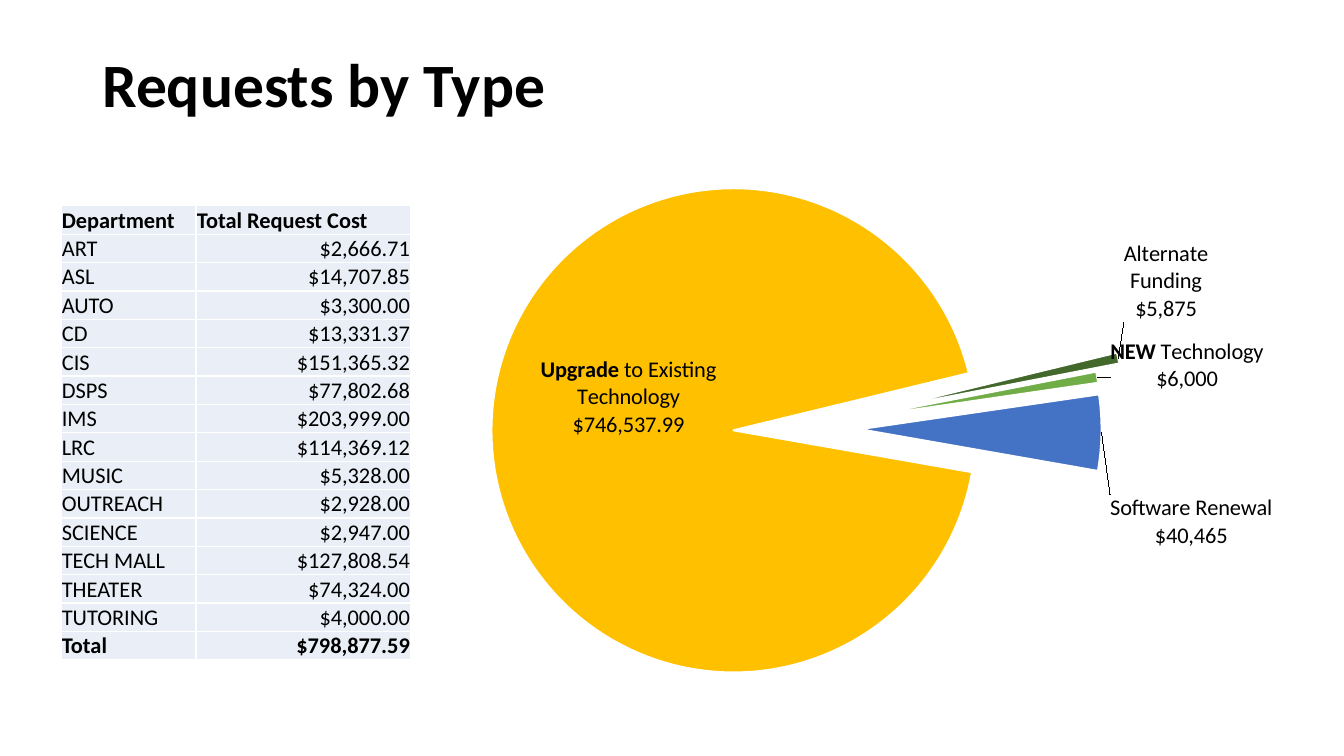
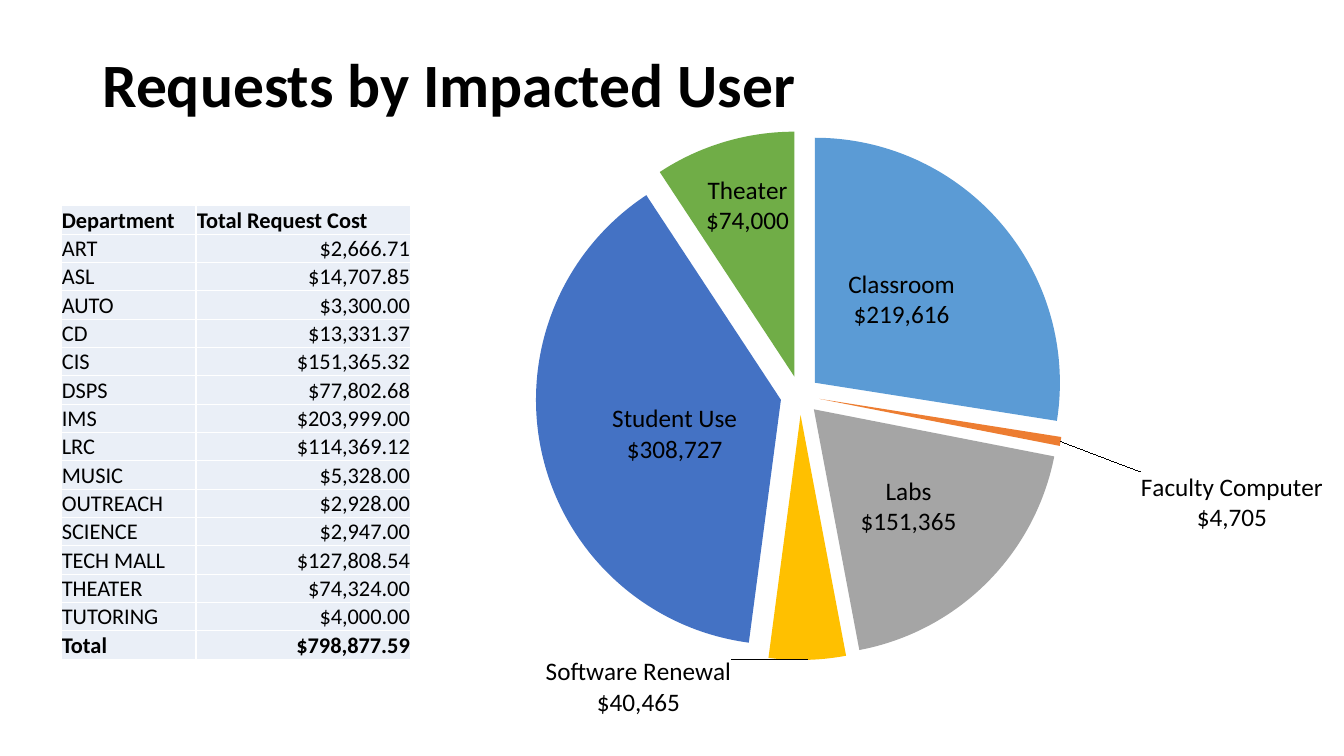
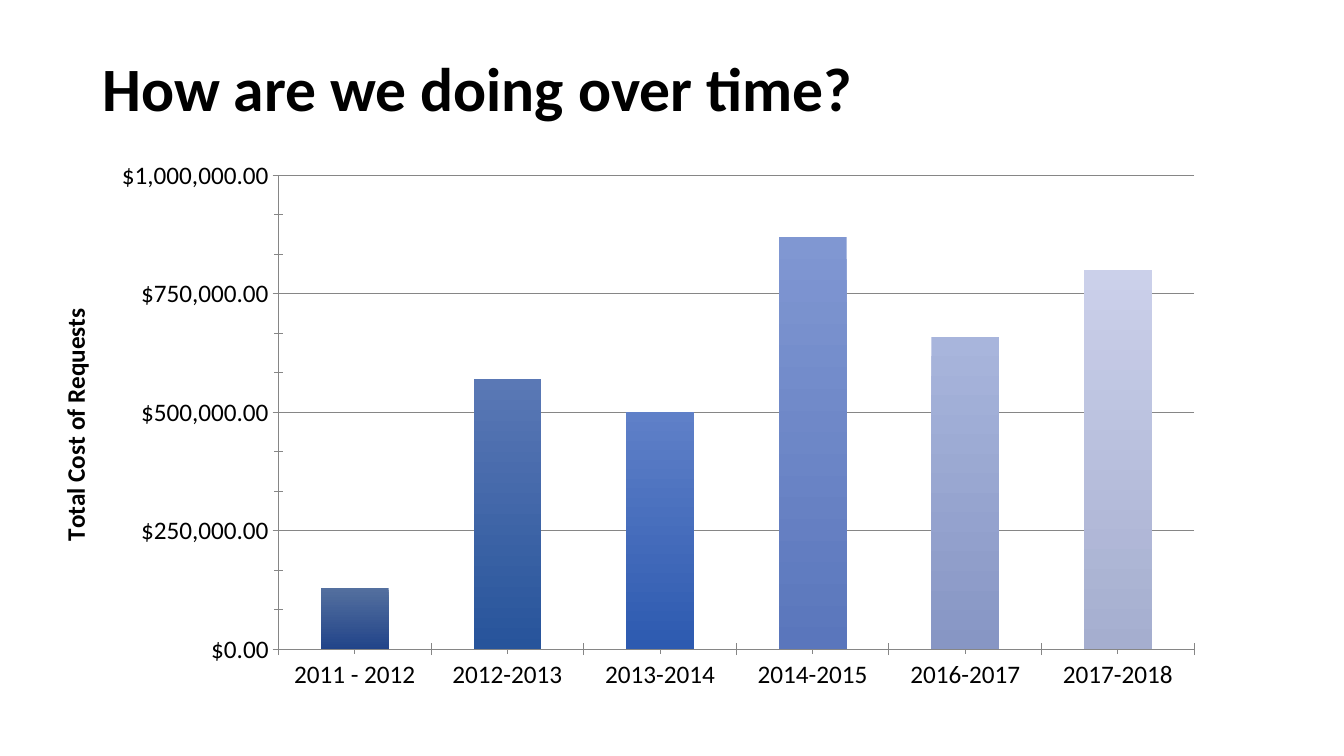
import math

from pptx import Presentation
from pptx.chart.data import CategoryChartData
from pptx.dml.color import RGBColor
from pptx.enum import chart as kinds, text
from pptx.oxml import parse_xml
from pptx.oxml.ns import nsdecls, qn
from pptx.util import Pt

FONT, BLACK, WHITE, TABLE_FILL, AXIS_GRAY = "Calibri", "000000", "FFFFFF", "EAEFF7", "868686"
DOLLARS = '"$"#,##0'

REQUESTS = [
    ("Department", "Total Request Cost"),
    ("ART", "$2,666.71"), ("ASL", "$14,707.85"), ("AUTO", "$3,300.00"),
    ("CD", "$13,331.37"), ("CIS", "$151,365.32"), ("DSPS", "$77,802.68"),
    ("IMS", "$203,999.00"), ("LRC", "$114,369.12"), ("MUSIC", "$5,328.00"),
    ("OUTREACH", "$2,928.00"), ("SCIENCE", "$2,947.00"), ("TECH MALL", "$127,808.54"),
    ("THEATER", "$74,324.00"), ("TUTORING", "$4,000.00"), ("Total", "$798,877.59"),
]

# Slices: name, value, colour, explosion %, label centre on the slide, label runs (text, bold)
BY_TYPE = dict(
    frame=(204.5, 24.5, 722, 562), center=(569, 306), radius=173, start=79, size=16, border=1.5,
    slices=[
        ("NEW Technology", 6000, "70AD47", 26, (848, 261),
         [("NEW", 1), (" Technology\n$6,000", 0)]),
        ("Software Renewal", 40465, "4472C4", 26, (851, 373), None),
        ("Upgrade to Existing Technology", 746538, "FFC000", 26, (449, 284),
         [("Upgrade", 1), (" to Existing\nTechnology\n$746,537.99", 0)]),
        ("Alternate Funding", 5875, "43682B", 36, (833, 201),
         [("Alternate\nFunding\n$5,875", 0)]),
    ])
BY_USER = dict(
    frame=(0, 56, 950, 462), center=(571.5, 282.5), radius=175, start=0, size=18, border=0,
    slices=[
        ("Classroom", 219616, "5B9BD5", 8, (644, 214), None),
        ("Faculty Computer", 4705, "ED7D31", 8, (880, 359), None),
        ("Labs", 151365, "A5A5A5", 8, (649, 362), None),
        ("Software Renewal", 40465, "FFC000", 8, (456, 491), None),
        ("Student Use", 308727, "4472C4", 8, (482, 310), None),
        ("Theater", 74000, "70AD47", 8, (534, 147), None),
    ])

# Year, total cost, top and bottom colour of the bar
YEARS = [
    ("2011 - 2012", 130000, "54709F", "224489"),
    ("2012-2013", 570000, "5A78B5", "27549B"),
    ("2013-2014", 500000, "5F80C8", "2D5AB0"),
    ("2014-2015", 870000, "8097D2", "5A76BC"),
    ("2016-2017", 660000, "A8B5DC", "8796C4"),
    ("2017-2018", 800000, "CBD0EA", "A5AECF"),
]


def rgb(color):
    return RGBColor.from_string(color)


def style(font, size, bold=False):
    font.name, font.size, font.bold = FONT, Pt(size), bold
    font.color.rgb = rgb(BLACK)


def add_title(page, title, top=10):
    box = page.shapes.add_textbox(Pt(66), Pt(top), Pt(828), Pt(104.4))
    frame = box.text_frame
    frame.word_wrap = True
    frame.vertical_anchor = text.MSO_ANCHOR.MIDDLE
    frame.text = title
    frame.paragraphs[0].line_spacing = 0.9
    style(frame.paragraphs[0].runs[0].font, 44, True)


def add_cell_borders(cell):
    props = cell._tc.get_or_add_tcPr()
    for position, side in enumerate(("lnL", "lnR", "lnT", "lnB")):
        props.insert(position, parse_xml(
            f'<a:{side} {nsdecls("a")} w="12700"><a:solidFill>'
            f'<a:srgbClr val="{WHITE}"/></a:solidFill></a:{side}>'))


def add_request_table(page):
    row_height, widths = 20.25, (96.5, 153.5)
    table = page.shapes.add_table(len(REQUESTS), 2, Pt(43.5), Pt(147), Pt(sum(widths)),
                                  Pt(row_height * len(REQUESTS))).table
    for column, width in zip(table.columns, widths):
        column.width = Pt(width)
    last = len(REQUESTS) - 1
    for r, values in enumerate(REQUESTS):
        table.rows[r].height = Pt(row_height)
        for c, value in enumerate(values):
            cell = table.cell(r, c)
            cell.text = value
            cell.fill.solid()
            cell.fill.fore_color.rgb = rgb(TABLE_FILL)
            cell.vertical_anchor = text.MSO_ANCHOR.BOTTOM
            cell.margin_left = cell.margin_right = cell.margin_top = Pt(0.7)
            cell.margin_bottom = 0
            para = cell.text_frame.paragraphs[0]
            if r and c:
                para.alignment = text.PP_ALIGN.RIGHT
            style(para.runs[0].font, 16, r in (0, last))
            add_cell_borders(cell)


def add_chart(page, kind, frame, rows, size):
    data = CategoryChartData()
    data.categories = [row[0] for row in rows]
    data.add_series("Series 1", [row[1] for row in rows])
    chart = page.shapes.add_chart(kind, *map(Pt, frame), data).chart
    chart.has_legend = chart.has_title = False
    chart.plots[0].vary_by_categories = False
    style(chart.font, size)
    return chart


def layout_xml(inner=False, **values):
    """Manual chart layout; values are fractions of the chart's size."""
    parts = '<c:layoutTarget val="inner"/>' if inner else ""
    if inner:
        parts += '<c:xMode val="edge"/><c:yMode val="edge"/>'
    parts += "".join(f'<c:{key} val="{value:.4f}"/>' for key, value in values.items())
    return f'<c:layout {nsdecls("c")}><c:manualLayout>{parts}</c:manualLayout></c:layout>'


def set_plot_area(chart, x, y, w, h):
    area = chart._chartSpace.chart.plotArea
    for old in area.findall(qn("c:layout")):
        area.remove(old)
    area.insert(0, parse_xml(layout_xml(True, x=x, y=y, w=w, h=h)))


def label_text_xml(runs, size):
    paras = [[]]
    for content, bold in runs:
        for i, piece in enumerate(content.split("\n")):
            if i:
                paras.append([])
            paras[-1].append(
                f'<a:r><a:rPr lang="en-US" sz="{size * 100}" b="{bold}"><a:solidFill>'
                f'<a:srgbClr val="{BLACK}"/></a:solidFill><a:latin typeface="{FONT}"/></a:rPr>'
                f'<a:t>{piece}</a:t></a:r>')
    body = "".join(f'<a:p>{"".join(para)}</a:p>' for para in paras)
    return f'<c:tx><c:rich><a:bodyPr/>{body}</c:rich></c:tx>'


def add_pie(page, pie):
    left, top, width, height = pie["frame"]
    (cx, cy), radius, slices = pie["center"], pie["radius"], pie["slices"]
    chart = add_chart(page, kinds.XL_CHART_TYPE.PIE, pie["frame"], slices, pie["size"])
    set_plot_area(chart, (cx - radius - left) / width, (cy - radius - top) / height,
                  2 * radius / width, 2 * radius / height)
    plot = chart.plots[0]._element
    for old in plot.findall(qn("c:firstSliceAng")):
        plot.remove(old)
    plot.append(parse_xml(f'<c:firstSliceAng {nsdecls("c")} val="{pie["start"]}"/>'))

    series = chart.plots[0].series[0]
    total, angle, labels = sum(row[1] for row in slices), pie["start"], ""
    shown = ('<c:showLegendKey val="0"/><c:showVal val="1"/><c:showCatName val="1"/>'
             '<c:showSerName val="0"/><c:showPercent val="0"/><c:showBubbleSize val="0"/>'
             '<c:separator>\n</c:separator>')
    number = f"<c:numFmt formatCode='{DOLLARS}' sourceLinked='0'/>"
    for i, (name, value, color, explosion, (x, y), runs) in enumerate(slices):
        format = series.points[i].format
        format.fill.solid()
        format.fill.fore_color.rgb = rgb(color)
        if pie["border"]:
            format.line.color.rgb = rgb(WHITE)
            format.line.width = Pt(pie["border"])
        else:
            format.line.fill.background()
        series._element.findall(qn("c:dPt"))[i].find(qn("c:spPr")).addprevious(
            parse_xml(f'<c:explosion {nsdecls("c")} val="{explosion}"/>'))
        sweep = 360 * value / total
        middle = math.radians(angle + sweep / 2)
        angle += sweep
        distance = radius * (0.5 + explosion / 100)
        shift = layout_xml(x=(x - cx - distance * math.sin(middle)) / width,
                           y=(y - cy + distance * math.cos(middle)) / height)
        rich = label_text_xml(runs, pie["size"]) if runs else ""
        labels += (f'<c:dLbl><c:idx val="{i}"/>{shift}{rich}{number}'
                   f'<c:dLblPos val="ctr"/>{shown}</c:dLbl>')
    series._element.find(qn("c:cat")).addprevious(parse_xml(
        f'<c:dLbls {nsdecls("c", "a")}>{labels}{number}<c:dLblPos val="ctr"/>{shown}'
        '<c:showLeaderLines val="1"/></c:dLbls>'))


def add_cost_columns(page):
    chart = add_chart(page, kinds.XL_CHART_TYPE.COLUMN_CLUSTERED,
                      (37.5, 105, 828, 392.5), YEARS, 18)
    set_plot_area(chart, 0.195, 0.052, 0.79, 0.862)
    plot = chart.plots[0]
    plot.gap_width = 125
    for i, (_, _, *colors) in enumerate(YEARS):
        fill = plot.series[0].points[i].format.fill
        fill.gradient()
        fill.gradient_angle = 270
        for stop, color in zip(fill.gradient_stops, colors):
            stop.color.rgb = rgb(color)
    costs = chart.value_axis
    costs.minimum_scale, costs.maximum_scale = 0, 1000000
    costs.major_unit, costs.minor_unit = 250000, 83333.33
    costs.tick_labels.number_format = DOLLARS + ".00"
    costs.tick_labels.number_format_is_linked = False
    costs.axis_title.text_frame.text = "Total Cost of Requests"
    style(costs.axis_title.text_frame.paragraphs[0].runs[0].font, 18, True)
    for axis in (costs, chart.category_axis):
        axis.major_tick_mark = axis.minor_tick_mark = kinds.XL_TICK_MARK.CROSS
        axis.format.line.color.rgb = rgb(AXIS_GRAY)
    costs.major_gridlines.format.line.color.rgb = rgb(AXIS_GRAY)


def main():
    deck = Presentation()
    deck.slide_width, deck.slide_height = Pt(960), Pt(540)
    blank = deck.slide_layouts[6]
    for title, pie in (("Requests by Type", BY_TYPE), ("Requests by Impacted User", BY_USER)):
        page = deck.slides.add_slide(blank)
        add_pie(page, pie)
        add_request_table(page)
        add_title(page, title)
    page = deck.slides.add_slide(blank)
    add_cost_columns(page)
    add_title(page, "How are we doing over time?", 13)
    deck.save("out.pptx")


if __name__ == "__main__":
    main()
